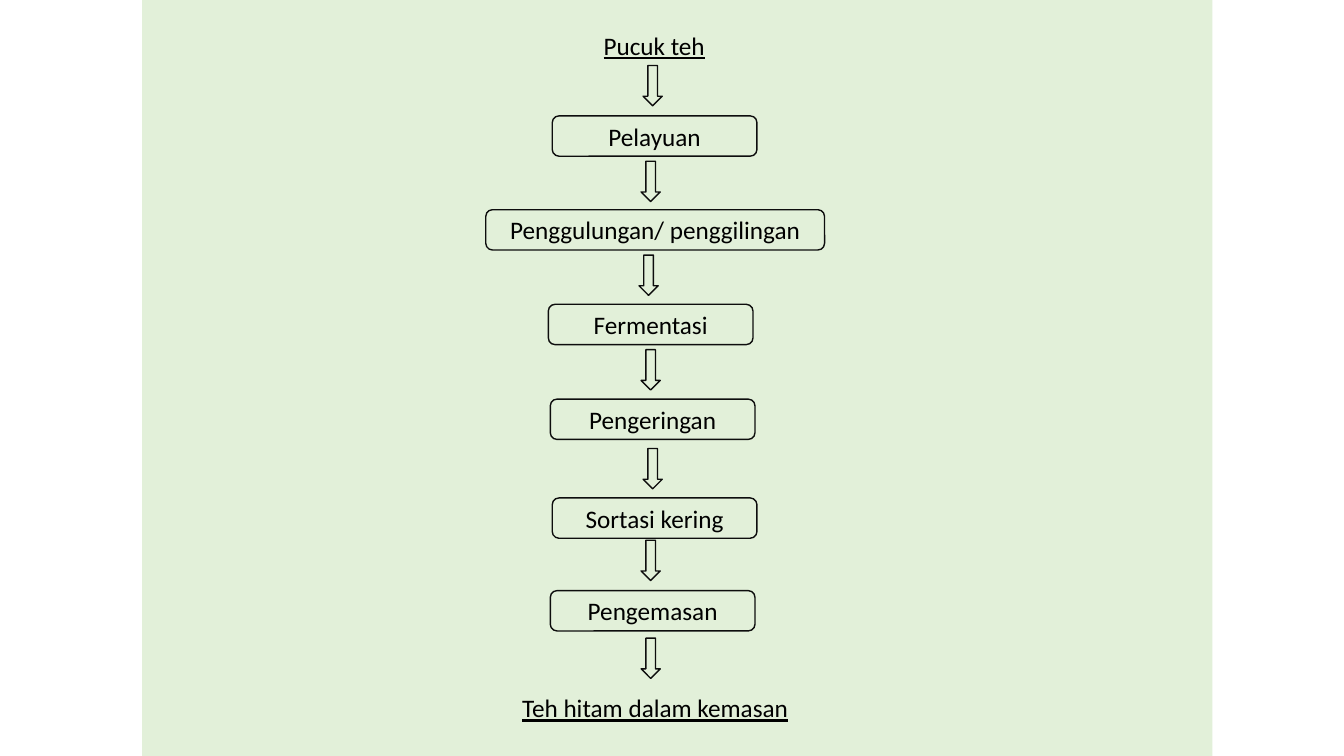
import pptx
import pptx.dml.color
import pptx.enum.shapes
import pptx.enum.text
import pptx.util

Pt = pptx.util.Pt
RGB = pptx.dml.color.RGBColor.from_string
SHAPE = pptx.enum.shapes.MSO_SHAPE
TEXT = pptx.enum.text

START = "Pucuk teh"
# label, box width, box centre x, box top, centre x and top of the arrow above
STEPS = [
    ("Pelayuan", 146.2, 467.6, 82.8, 466.2, 46.8),
    ("Penggulungan/ penggilingan", 242, 468, 149.8, 464.8, 115.2),
    ("Fermentasi", 146.2, 464.8, 217.4, 463.3, 182.2),
    ("Pengeringan", 146.2, 466.2, 285.1, 464.8, 249.8),
    ("Sortasi kering", 146.2, 467.6, 355.7, 466.2, 320.4),
    ("Pengemasan", 146.2, 466.2, 421.9, 464.8, 385.9),
    ("Teh hitam dalam kemasan", 242, 468, 491, 464.8, 455.8),
]
THEME = {
    "panel": "E2F0D9",
    "line": "0D0D0D",
    "line_width": 1,
    "text": "000000",
    "font": "Calibri",
    "size": 18,
}
SLIDE_W, SLIDE_H = 960, 540
ROW_H, ARROW_W = 28.8, 13.7


def add_shape(slide, kind, x, y, w, h, fill=None, outlined=True):
    sp = slide.shapes.add_shape(kind, Pt(x), Pt(y), Pt(w), Pt(h))
    sp.shadow.inherit = False
    if fill:
        sp.fill.solid()
        sp.fill.fore_color.rgb = RGB(fill)
    else:
        sp.fill.background()
    if outlined:
        sp.line.color.rgb = RGB(THEME["line"])
        sp.line.width = Pt(THEME["line_width"])
    else:
        sp.line.fill.background()
    return sp


def write(sp, text, underline=False):
    tf = sp.text_frame
    frame = {
        "word_wrap": True,
        "auto_size": TEXT.MSO_AUTO_SIZE.NONE,
        "vertical_anchor": TEXT.MSO_ANCHOR.MIDDLE,
        "margin_top": Pt(3.6),
        "margin_bottom": Pt(3.6),
    }
    for name, value in frame.items():
        setattr(tf, name, value)
    p = tf.paragraphs[0]
    p.alignment = TEXT.PP_ALIGN.CENTER
    r = p.add_run()
    r.text = text
    font = {"name": THEME["font"], "size": Pt(THEME["size"]), "underline": underline}
    for name, value in font.items():
        setattr(r.font, name, value)
    r.font.color.rgb = RGB(THEME["text"])


def main():
    prs = pptx.Presentation()
    prs.slide_width, prs.slide_height = Pt(SLIDE_W), Pt(SLIDE_H)
    slide = prs.slides.add_slide(prs.slide_layouts[5])

    panel = add_shape(slide, SHAPE.RECTANGLE, 101.5, 0, 764.6, SLIDE_H,
                      fill=THEME["panel"], outlined=False)
    title = slide.shapes.title
    title._element.addprevious(panel._element)
    box = {"left": 423.4, "top": 18, "width": 87.8, "height": ROW_H}
    for name, value in box.items():
        setattr(title, name, Pt(value))
    write(title, START, underline=True)

    for label, width, box_x, box_y, arrow_x, arrow_y in STEPS:
        last = label == STEPS[-1][0]
        add_shape(slide, SHAPE.DOWN_ARROW, arrow_x - ARROW_W / 2, arrow_y, ARROW_W, ROW_H)
        sp = add_shape(slide, SHAPE.ROUNDED_RECTANGLE, box_x - width / 2, box_y,
                       width, ROW_H, outlined=not last)
        write(sp, label, underline=last)

    prs.save("out.pptx")


if __name__ == "__main__":
    main()
